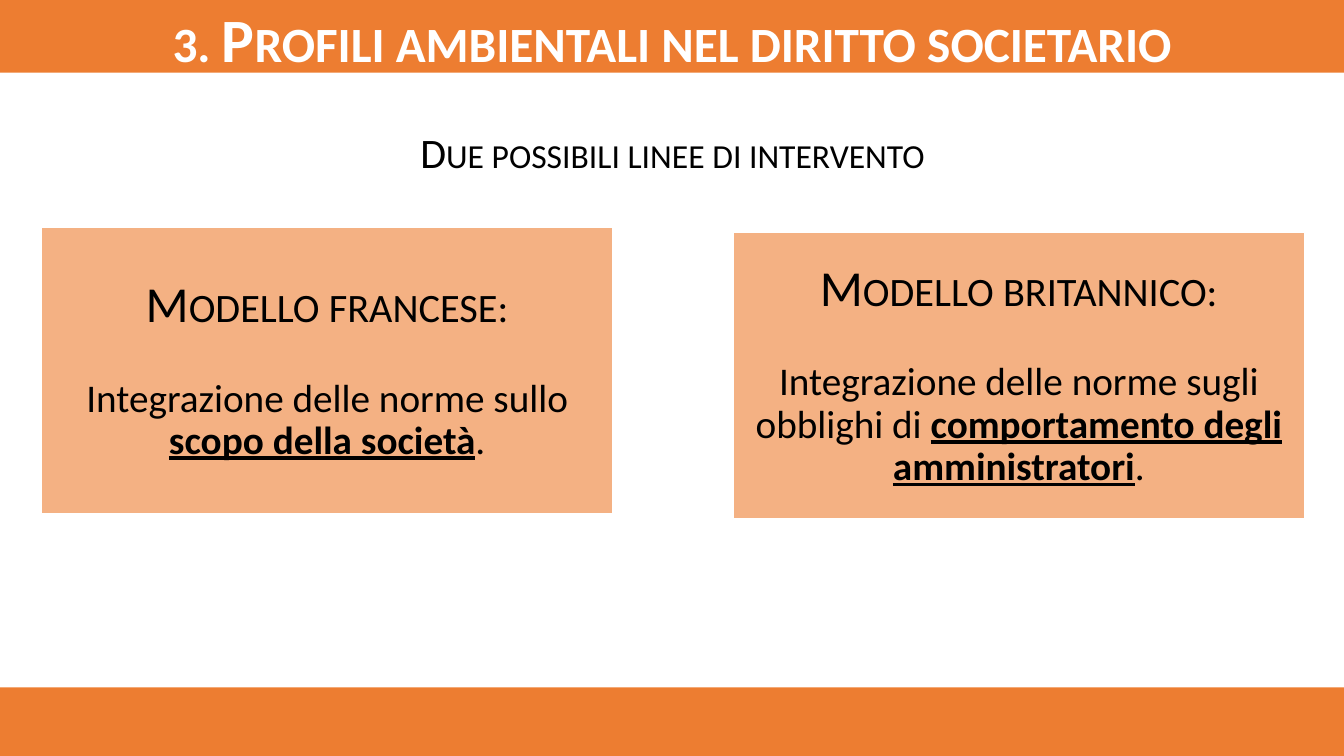
from pptx import Presentation
from pptx.dml.color import RGBColor
from pptx.enum.shapes import MSO_SHAPE
from pptx.enum.text import MSO_ANCHOR, PP_ALIGN
from pptx.util import Inches, Pt

ORANGE = RGBColor(0xED, 0x7D, 0x31)
PEACH = RGBColor(0xF4, 0xB1, 0x83)
WHITE = RGBColor(0xFF, 0xFF, 0xFF)
BLACK = RGBColor(0x00, 0x00, 0x00)

SLIDE_WIDTH, SLIDE_HEIGHT = 13.33, 7.5
CARD_WIDTH, CARD_HEIGHT = 5.67, 2.84
HEADING = {"size": Pt(36), "small_caps": True}
BODY = {"size": Pt(28)}
KEY_PHRASE = {"size": Pt(28), "bold": True, "underline": True}


class SlideBuilder:
    def __init__(self, slide, font_name="Calibri"):
        self.slide = slide
        self.font_name = font_name

    def rectangle(self, left, top, width, height, fill, line=None):
        shape = self.slide.shapes.add_shape(
            MSO_SHAPE.RECTANGLE, Inches(left), Inches(top), Inches(width), Inches(height))
        shape.shadow.inherit = False
        shape.fill.solid()
        shape.fill.fore_color.rgb = fill
        if line is None:
            shape.line.fill.background()
        else:
            shape.line.color.rgb = line
            shape.line.width = Pt(1)
        return shape

    def text_box(self, left, top, width, height):
        return self.slide.shapes.add_textbox(
            Inches(left), Inches(top), Inches(width), Inches(height))

    def add_text(self, shape, paragraphs, anchor=MSO_ANCHOR.MIDDLE, margins=(0.1, 0.05),
                 color=BLACK, line_spacing=None, gap=None):
        """Fill a shape with paragraphs, each a list of (text, font format) pairs."""
        frame = shape.text_frame
        horizontal, vertical = map(Inches, margins)
        frame_format = {
            "word_wrap": True, "vertical_anchor": anchor,
            "margin_left": horizontal, "margin_right": horizontal,
            "margin_top": vertical, "margin_bottom": vertical,
        }
        for name, value in frame_format.items():
            setattr(frame, name, value)
        for index, runs in enumerate(paragraphs):
            paragraph = frame.add_paragraph() if index else frame.paragraphs[0]
            paragraph.alignment = PP_ALIGN.CENTER
            paragraph.line_spacing = line_spacing
            if index:
                paragraph.space_before = gap
            for text, font_format in runs:
                self.add_run(paragraph, text, font_format, color)

    def add_run(self, paragraph, text, font_format, color):
        run = paragraph.add_run()
        run.text = text
        run.font.name = self.font_name
        run.font.color.rgb = color
        for name, value in font_format.items():
            if name == "small_caps":
                run._r.get_or_add_rPr().set("cap", "small")
            else:
                setattr(run.font, name, value)

    def model_card(self, left, top, heading, description, key_phrase):
        card = self.rectangle(left, top, CARD_WIDTH, CARD_HEIGHT, PEACH, WHITE)
        body = [(description, BODY), (key_phrase, KEY_PHRASE), (".", BODY)]
        self.add_text(card, [[(heading, HEADING)], body], margins=(0.03, 0.03),
                      line_spacing=0.9, gap=Pt(32))


def main():
    presentation = Presentation()
    presentation.slide_width = Inches(SLIDE_WIDTH)
    presentation.slide_height = Inches(SLIDE_HEIGHT)
    builder = SlideBuilder(presentation.slides.add_slide(presentation.slide_layouts[6]))

    for top, height in ((6.82, 0.68), (0, 0.72)):
        builder.rectangle(0, top, SLIDE_WIDTH, height, ORANGE)

    title = builder.text_box(0, 0.08, SLIDE_WIDTH, 0.59)
    title_format = {"size": Pt(44), "bold": True, "small_caps": True}
    builder.add_text(title, [[("3. Profili ambientali nel diritto societario", title_format)]],
                     margins=(0.07, 0.04), color=WHITE)

    builder.model_card(0.41, 2.26, "Modello francese:",
                       "Integrazione delle norme sullo ", "scopo della società")
    builder.model_card(7.27, 2.31, "Modello britannico:",
                       "Integrazione delle norme sugli obblighi di ",
                       "comportamento degli amministratori")

    subtitle = builder.text_box(1.68, 1.21, 9.98, 0.61)
    subtitle_format = {"size": Pt(30), "small_caps": True}
    builder.add_text(subtitle, [[("Due possibili linee di intervento", subtitle_format)]],
                     anchor=MSO_ANCHOR.TOP)

    presentation.save("out.pptx")


if __name__ == "__main__":
    main()
